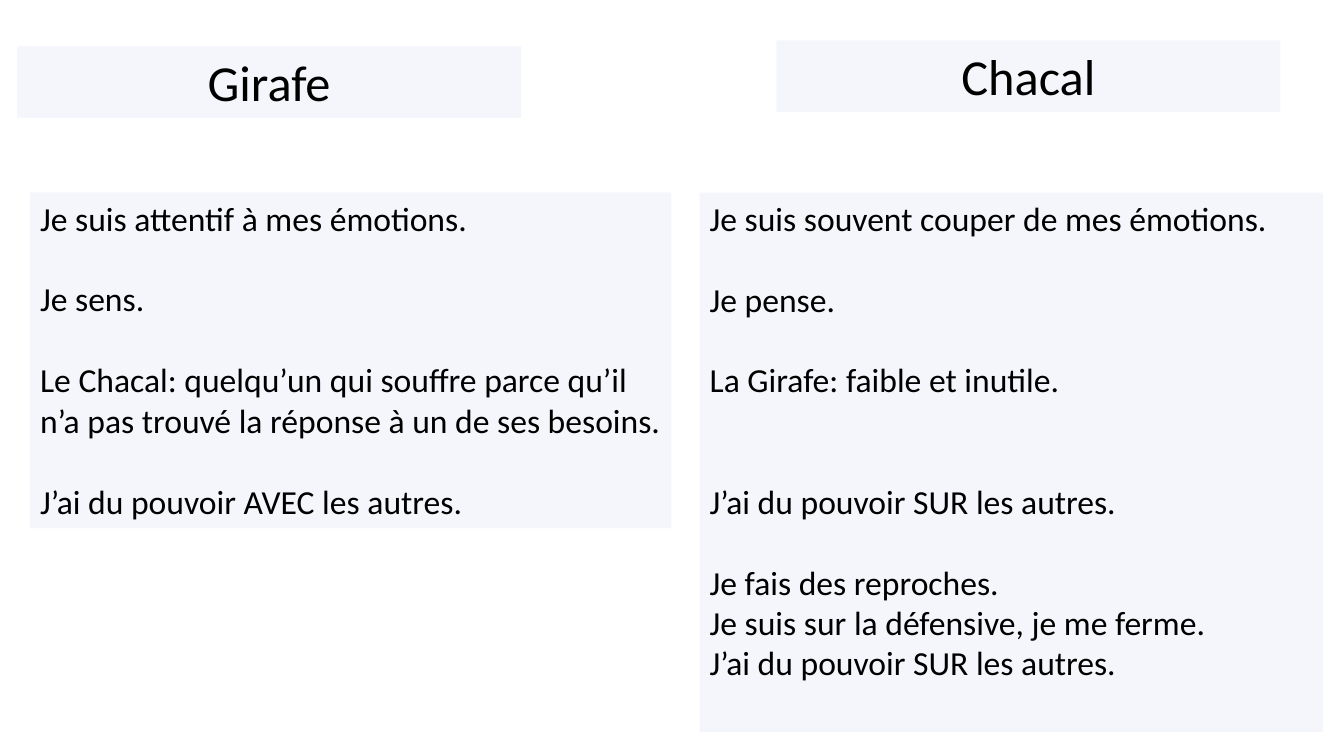
from dataclasses import dataclass

from lxml.etree import SubElement
from pptx import Presentation
from pptx.dml.color import RGBColor
from pptx.enum.text import MSO_ANCHOR as Anchor, MSO_AUTO_SIZE as AutoSize, PP_ALIGN as Align
from pptx.oxml.ns import qn
from pptx.slide import Slide
from pptx.util import Emu, Pt

PX = 9144  # EMU in one px, at 100 px to the inch


@dataclass(frozen=True)
class Theme:
    font: str = "Calibri"
    text: RGBColor = RGBColor(0x00, 0x00, 0x00)
    panel: RGBColor = RGBColor(0x44, 0x72, 0xC4)
    panel_opacity: int = 6  # percent
    heading_size: int = 36
    body_size: int = 24
    line_height: int = 29  # points taken by one skipped body line


@dataclass(frozen=True)
class Statement:
    text: str
    skipped_lines: int = 1


@dataclass(frozen=True)
class Panel:
    left: int
    top: int
    width: int
    height: int
    size: int
    align: Align
    statements: tuple[Statement, ...]


THEME = Theme()


def heading(left: int, top: int, name: str) -> Panel:
    return Panel(left, top, 500, 71, THEME.heading_size, Align.CENTER, (Statement(name, 0),))


def attitudes(left: int, width: int, height: int, *statements: Statement) -> Panel:
    return Panel(left, 191, width, height, THEME.body_size, Align.LEFT, statements)


PANELS = (
    heading(770, 40, "Chacal"),
    heading(17, 46, "Girafe"),
    attitudes(
        30, 636, 333,
        Statement("Je suis attentif à mes émotions.", 0),
        Statement("Je sens."),
        Statement("Le Chacal: quelqu’un qui souffre parce qu’il n’a pas trouvé "
                  "la réponse à un de ses besoins."),
        Statement("J’ai du pouvoir AVEC les autres."),
    ),
    attitudes(
        694, 618, 535,
        Statement("Je suis souvent couper de mes émotions.", 0),
        Statement("Je pense."),
        Statement("La Girafe: faible et inutile."),
        Statement("J’ai du pouvoir SUR les autres.", 2),
        Statement("Je fais des reproches."),
        Statement("Je suis sur la défensive, je me ferme.", 0),
        Statement("J’ai du pouvoir SUR les autres.", 0),
    ),
)


def draw_panel(slide: Slide, panel: Panel) -> None:
    bounds = (panel.left, panel.top, panel.width, panel.height)
    box = slide.shapes.add_textbox(*(Emu(length * PX) for length in bounds))

    # Translucent background
    box.fill.solid()
    box.fill.fore_color.rgb = THEME.panel
    tint = box.fill._xPr.find(qn("a:solidFill"))[0]
    SubElement(tint, qn("a:alpha"), val=str(THEME.panel_opacity * 1000))

    frame = box.text_frame
    frame_format = {"word_wrap": True, "auto_size": AutoSize.NONE, "vertical_anchor": Anchor.TOP}
    for attribute, value in frame_format.items():
        setattr(frame, attribute, value)

    # Statements, set apart by paragraph spacing
    for index, statement in enumerate(panel.statements):
        paragraph = frame.add_paragraph() if index else frame.paragraphs[0]
        paragraph.alignment = panel.align
        paragraph.space_before = Pt(statement.skipped_lines * THEME.line_height)
        run = paragraph.add_run()
        run.text = statement.text
        for attribute, value in {"name": THEME.font, "size": Pt(panel.size)}.items():
            setattr(run.font, attribute, value)
        run.font.color.rgb = THEME.text


def main() -> None:
    deck = Presentation()
    deck.slide_width, deck.slide_height = Emu(1333 * PX), Emu(750 * PX)
    slide = deck.slides.add_slide(deck.slide_layouts.get_by_name("Blank"))
    for panel in PANELS:
        draw_panel(slide, panel)
    deck.save("out.pptx")


if __name__ == "__main__":
    main()
